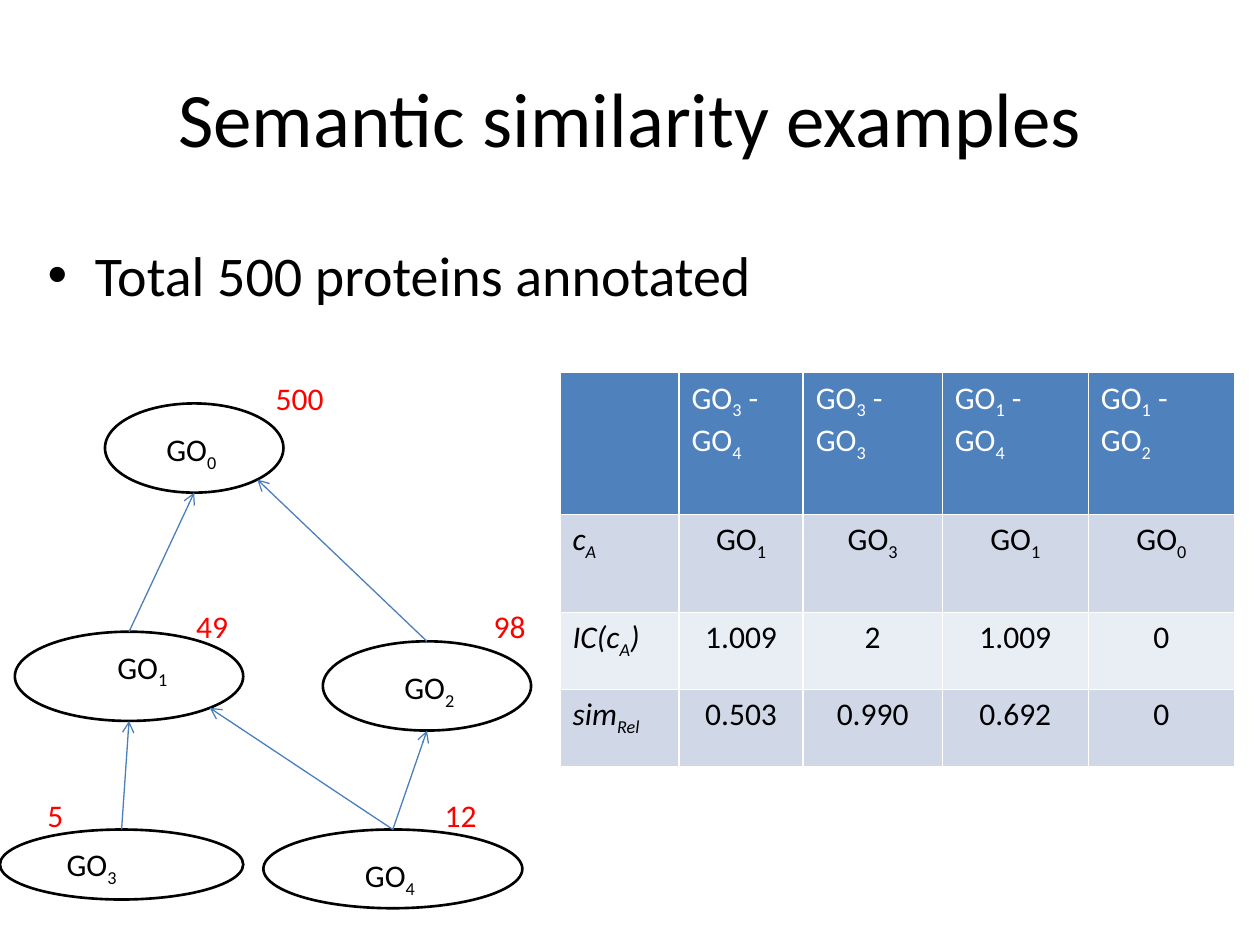
from math import sqrt

from lxml.etree import SubElement
from pptx import Presentation
from pptx.dml.color import RGBColor
from pptx.enum.shapes import MSO_CONNECTOR, MSO_SHAPE
from pptx.enum.text import MSO_ANCHOR, PP_ALIGN
from pptx.oxml.ns import qn
from pptx.util import Pt

# name: ellipse box, label corner, count, count corner
NODES = {
    "3": ((0, 474, 139, 40), (31, 479.5), "5", (20, 451.5)),
    "4": ((150.5, 474, 148, 45), (201.5, 485.5), "12", (247, 451.5)),
    "1": ((8.5, 361, 130.5, 51), (60, 366.5), "49", (105, 343.5)),
    "2": ((184.5, 366.5, 119, 51), (224, 378), "98", (275, 343.5)),
    "0": ((60, 230.5, 102, 51), (88, 242), "500", (150.5, 213)),
}
# child, parent, whether the arrow meets the parent's lower right
EDGES = [("3", "1", False), ("4", "1", True), ("4", "2", False),
         ("1", "0", False), ("2", "0", True)]
WIDTHS = {"5": 24.5, "500": 44.5}

ROWS = [
    ["", "GO~3~ - GO~4~", "GO~3~ - GO~3~", "GO~1~ - GO~4~", "GO~1~ - GO~2~"],
    ["c~A~", "GO~1~", "GO~3~", "GO~1~", "GO~0~"],
    ["IC(c~A~)", "1.009", "2", "1.009", "0"],
    ["sim~Rel~", "0.503", "0.990", "0.692", "0"],
]
FILLS = ["4F81BD", "D0D8E8", "E9EDF4", "D0D8E8"]
COLS = [68, 71, 79.5, 83.5, 83.5]
HIGHS = [81, 56, 44, 44]


def paint(fmt, color):
    fmt.solid()
    fmt.fore_color.rgb = RGBColor.from_string(color)


def write(frame, text, size=18, color="000000", italic=False, align=PP_ALIGN.LEFT):
    """Fill the frame; parts between tildes become subscripts."""
    para = frame.paragraphs[0]
    para.alignment = align
    for i, part in enumerate(text.split("~")):
        if not part:
            continue
        run = para.add_run()
        run.text = part
        font = run.font
        font.name, font.size = "Calibri", Pt(size)
        font.bold, font.italic = False, italic
        paint(font.fill, color)
        if i % 2:
            font._element.set("baseline", "-25000")


def place(shape, left, top, width, height):
    shape.left, shape.top = Pt(left), Pt(top)
    shape.width, shape.height = Pt(width), Pt(height)


def label(slide, text, spot, width, color="000000"):
    box = slide.shapes.add_textbox(*map(Pt, (*spot, width, 29)))
    box.text_frame.word_wrap = False
    write(box.text_frame, text, color=color)


def node(slide, box):
    oval = slide.shapes.add_shape(MSO_SHAPE.OVAL, *map(Pt, box))
    oval.shadow.inherit = False
    oval.fill.background()
    paint(oval.line.fill, "000000")
    oval.line.width = Pt(1.5)
    return oval


def arrow(slide, child, parent, side):
    x = parent.left + parent.width / 2
    y = parent.top + parent.height
    if side:
        x += parent.width / 2 / sqrt(2)
        y -= parent.height / 2 * (1 - 1 / sqrt(2))
    line = slide.shapes.add_connector(
        MSO_CONNECTOR.STRAIGHT, child.left, child.top, int(x), int(y))
    line.begin_connect(child, 0)
    paint(line.line.fill, "4B7EBC")
    line.line.width = Pt(0.75)
    SubElement(line.line._get_or_add_ln(), qn("a:tailEnd"), type="arrow")
    SubElement(line._element.spPr, qn("a:effectLst"))


def graph(slide):
    ovals = {name: node(slide, item[0]) for name, item in NODES.items()}
    for child, parent, side in EDGES:
        arrow(slide, ovals[child], ovals[parent], side)
    for name, (_, spot, count, mark) in NODES.items():
        label(slide, f"GO~{name}~", spot, 49.5)
        label(slide, count, mark, WIDTHS.get(count, 34.5), "FF0000")


def grid(slide):
    table = slide.shapes.add_table(
        len(ROWS), len(COLS), *map(Pt, (320, 213, sum(COLS), sum(HIGHS)))).table
    for col, width in zip(table.columns, COLS):
        col.width = Pt(width)
    for r, row in enumerate(ROWS):
        table.rows[r].height = Pt(HIGHS[r])
        for c, text in enumerate(row):
            cell = table.cell(r, c)
            paint(cell.fill, FILLS[r])
            write(cell.text_frame, text,
                  color="000000" if r else "FFFFFF",
                  italic=r > 0 and c == 0,
                  align=PP_ALIGN.CENTER if r and c else PP_ALIGN.LEFT)


def main():
    deck = Presentation()
    deck.slide_width, deck.slide_height = Pt(720), Pt(540)
    slide = deck.slides.add_slide(deck.slide_layouts[1])
    title, body = slide.placeholders
    place(title, 36, 21.5, 648, 90)
    title.text_frame.vertical_anchor = MSO_ANCHOR.MIDDLE
    write(title.text_frame, "Semantic similarity examples", size=44,
          align=PP_ALIGN.CENTER)
    place(body, 20, 134, 646.5, 385)
    write(body.text_frame, "Total 500 proteins annotated", size=32)
    graph(slide)
    grid(slide)
    deck.save("out.pptx")


if __name__ == "__main__":
    main()
